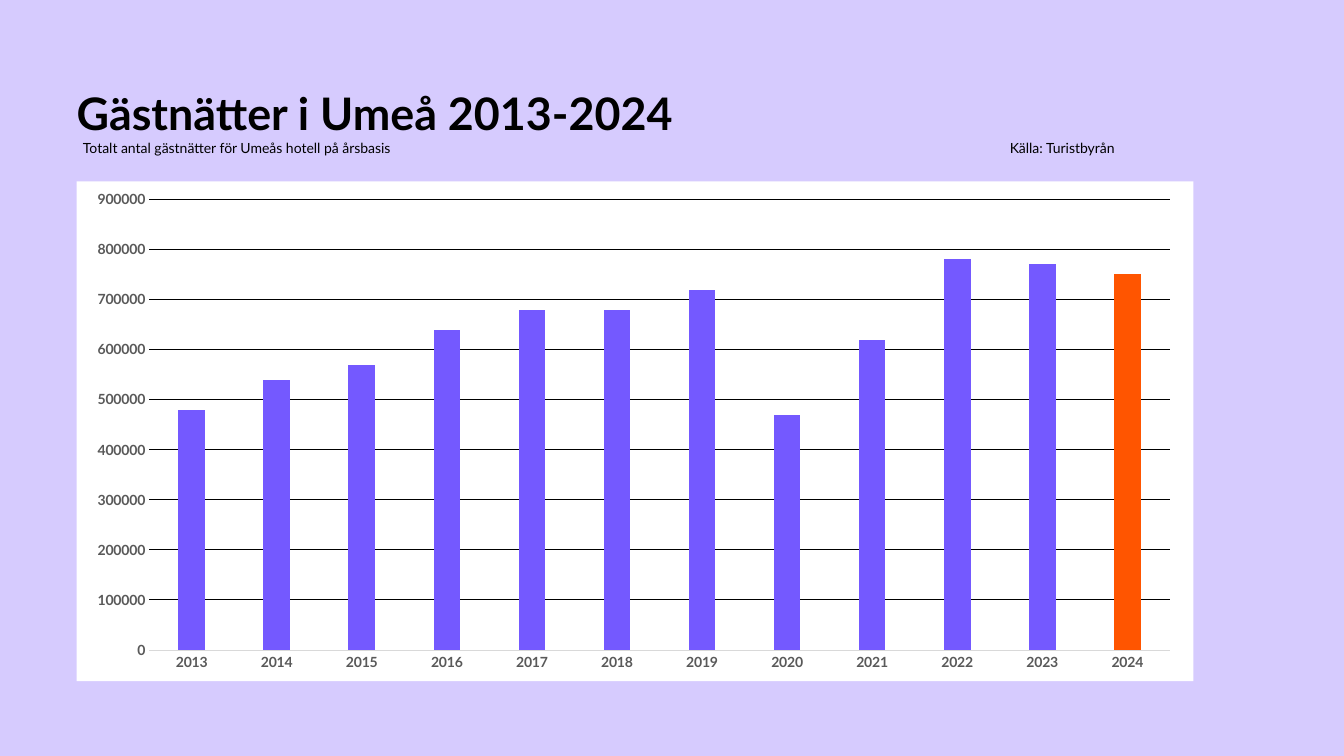
import pptx
import pptx.chart.data
import pptx.dml.color
import pptx.enum.chart
import pptx.enum.text
import pptx.oxml
import pptx.oxml.ns
import pptx.util

WIDTH = pptx.util.Inches(13.33)
HEIGHT = pptx.util.Inches(7.5)
FONT = "Lato"
COLOURS = {
    "background": "D6CBFE",
    "panel": "FFFFFF",
    "text": "000000",
    "label": "595959",
    "axis": "D9D9D9",
    "bar": "7459FF",
    "highlight": "FF5500",
}
GUEST_NIGHTS = {
    "2013": 480000, "2014": 540000, "2015": 570000, "2016": 640000,
    "2017": 680000, "2018": 680000, "2019": 720000, "2020": 470000,
    "2021": 620000, "2022": 780000, "2023": 770000, "2024": 750000,
}
PLOT_SHARES = {"x": 0.065, "y": 0.036, "w": 0.914, "h": 0.902}
ALIGN = pptx.enum.text.PP_ALIGN


def colour(name):
    return pptx.dml.color.RGBColor.from_string(COLOURS[name])


def paint(fill, name):
    fill.solid()
    fill.fore_color.rgb = colour(name)


def share_box(left, top, width, height):
    return (round(left * WIDTH), round(top * HEIGHT),
            round(width * WIDTH), round(height * HEIGHT))


def place(shape, box):
    shape.left, shape.top, shape.width, shape.height = box


def format_font(font, size=10, bold=False, name="text"):
    font.name = FONT
    font.size = pptx.util.Pt(size)
    font.bold = bold
    font.color.rgb = colour(name)


def write_text(shape, text, align=ALIGN.LEFT, line_spacing=None, margin=None, **font_format):
    frame = shape.text_frame
    frame.word_wrap = True
    frame.auto_size = pptx.enum.text.MSO_AUTO_SIZE.NONE
    frame.vertical_anchor = pptx.enum.text.MSO_ANCHOR.TOP
    if margin is not None:
        frame.margin_left = frame.margin_right = margin
        frame.margin_top = frame.margin_bottom = margin
    paragraph = frame.paragraphs[0]
    paragraph.alignment = align
    paragraph.line_spacing = line_spacing
    run = paragraph.add_run()
    run.text = text
    format_font(run.font, **font_format)


def add_heading(slide, box):
    left, top, width, height = box
    title = slide.shapes.title
    place(title, box)
    write_text(title, "Gästnätter i Umeå 2013-2024", margin=0,
               line_spacing=pptx.util.Pt(72), size=32, bold=True)
    caption_top = top + round(0.84 * height)
    caption_size = (round(0.358 * width), round(0.24 * height))
    captions = [
        (-0.003, "Totalt antal gästnätter för Umeås hotell på årsbasis", ALIGN.LEFT),
        (0.522, "Källa: Turistbyrån", ALIGN.RIGHT),
    ]
    for offset, text, align in captions:
        caption = slide.shapes.add_textbox(
            left + round(offset * width), caption_top, *caption_size)
        write_text(caption, text, align=align)


def style_chart_area(chart):
    properties = pptx.oxml.parse_xml(
        f'<c:spPr {pptx.oxml.ns.nsdecls("c", "a")}><a:solidFill>'
        f'<a:srgbClr val="{COLOURS["panel"]}"/></a:solidFill>'
        '<a:ln><a:noFill/></a:ln></c:spPr>')
    chart_space = chart.element
    chart_space.find(pptx.oxml.ns.qn("c:chart")).addnext(properties)
    plot_area = chart_space.find(".//" + pptx.oxml.ns.qn("c:plotArea"))
    for layout in plot_area.findall(pptx.oxml.ns.qn("c:layout")):
        plot_area.remove(layout)
    shares = "".join(f'<c:{key} val="{value}"/>' for key, value in PLOT_SHARES.items())
    plot_area.insert(0, pptx.oxml.parse_xml(
        f'<c:layout {pptx.oxml.ns.nsdecls("c")}><c:manualLayout>'
        '<c:layoutTarget val="inner"/><c:xMode val="edge"/><c:yMode val="edge"/>'
        f'{shares}</c:manualLayout></c:layout>'))


def add_guest_chart(slide, box):
    data = pptx.chart.data.CategoryChartData()
    data.categories = list(GUEST_NIGHTS)
    data.add_series("Series 1", list(GUEST_NIGHTS.values()))
    chart = slide.shapes.add_chart(
        pptx.enum.chart.XL_CHART_TYPE.COLUMN_CLUSTERED, *box, data).chart
    chart.has_legend = False
    chart.has_title = False
    chart.font.name = "Cabin"
    chart.font.size = pptx.util.Pt(10)
    style_chart_area(chart)

    plot = chart.plots[0]
    plot.gap_width = 219
    plot.overlap = -27
    plot.vary_by_categories = False
    series = plot.series[0]
    paint(series.format.fill, "bar")
    paint(series.points[len(GUEST_NIGHTS) - 1].format.fill, "highlight")

    for axis in (chart.category_axis, chart.value_axis):
        axis.major_tick_mark = axis.minor_tick_mark = pptx.enum.chart.XL_TICK_MARK.NONE
        format_font(axis.tick_labels.font, bold=True, name="label")
    value_axis = chart.value_axis
    value_axis.minimum_scale = 0
    value_axis.maximum_scale = 900000
    value_axis.major_unit = 100000
    value_axis.format.line.fill.background()
    value_axis.has_major_gridlines = True
    lines = [(chart.category_axis.format.line, "axis"),
             (value_axis.major_gridlines.format.line, "text")]
    for line, name in lines:
        line.width = pptx.util.Pt(0.75)
        paint(line.fill, name)


def build_chart_slide(presentation):
    slide = presentation.slides.add_slide(presentation.slide_layouts.get_by_name("Title Only"))
    paint(slide.background.fill, "background")
    add_heading(slide, share_box(0.057, 0.051, 0.886, 0.151))
    add_guest_chart(slide, share_box(0.057, 0.24, 0.831, 0.661))


def main():
    presentation = pptx.Presentation()
    presentation.slide_width = WIDTH
    presentation.slide_height = HEIGHT
    build_chart_slide(presentation)
    presentation.save("out.pptx")


if __name__ == "__main__":
    main()
